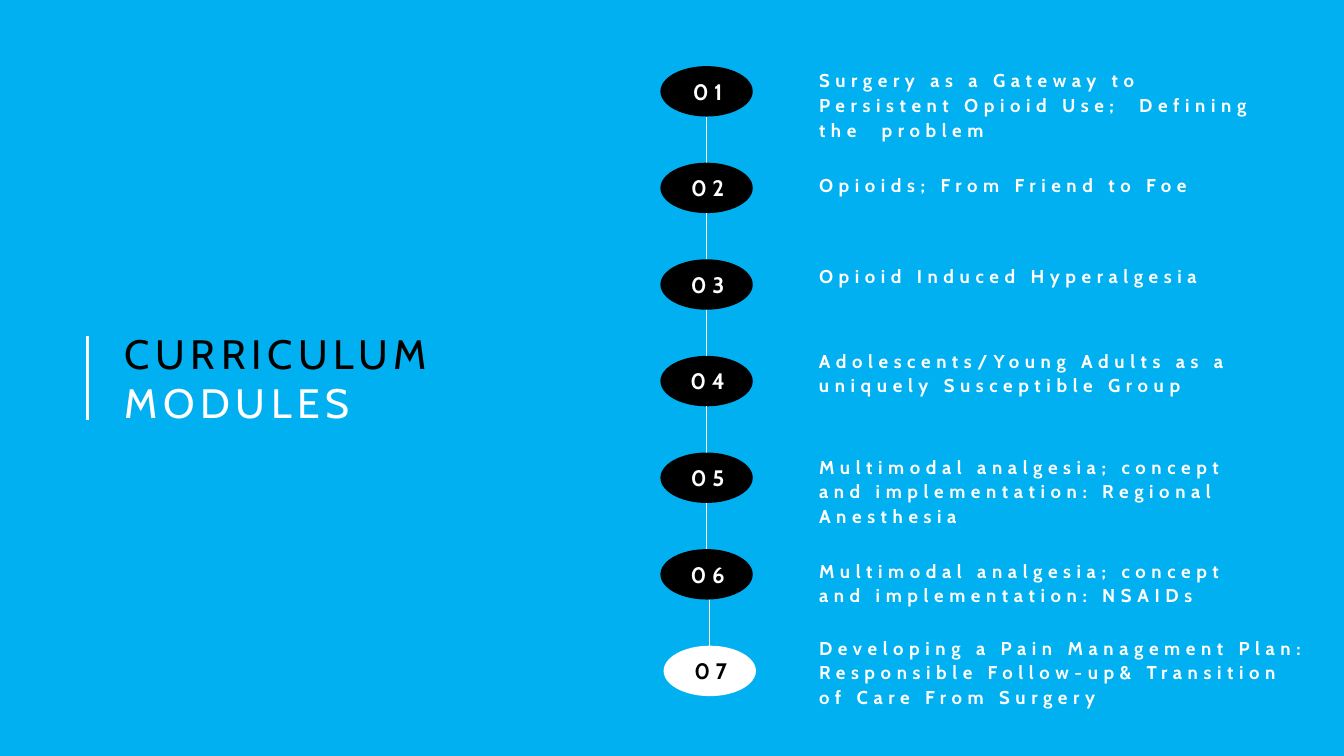
from dataclasses import dataclass

import lxml.etree
import pptx
import pptx.dml.color
import pptx.enum.shapes
import pptx.enum.text
import pptx.oxml.ns
import pptx.slide
import pptx.util

EMU = 9525  # one px, 96 to the inch
INK = {"sky": "00B0F0", "black": "000000", "white": "FFFFFF"}
FACE = "Cabin"
TRACK = 400  # letter spacing in hundredths of a point

TOP, STEP = 63, 92
OVAL_X, OVAL_W, OVAL_H = 629, 88, 48
TEXT_X = 780


@dataclass(frozen=True)
class Module:
    text: str
    top: int
    high: int
    wide: int = 417
    shift: int = 0
    fill: str = "black"
    ink: str = "white"


MODULES = [
    Module("Surgery as a Gateway to Persistent Opioid Use;  Defining the  problem", 64, 69),
    Module("Opioids; From Friend to Foe", 164, 22),
    Module("Opioid Induced Hyperalgesia", 250, 22),
    Module("Adolescents/Young Adults as a uniquely Susceptible Group", 331, 45, 441),
    Module("Multimodal analgesia; concept and implementation: Regional Anesthesia", 432, 93),
    Module("Multimodal analgesia; concept and implementation: NSAIDs", 531, 69),
    Module(
        "Developing a Pain Management Plan: Responsible Follow-up& Transition of Care From Surgery",
        604, 69, 465, shift=3, fill="white", ink="black",
    ),
]


def px(num: int) -> pptx.util.Emu:
    return pptx.util.Emu(num * EMU)


def tint(name: str) -> pptx.dml.color.RGBColor:
    return pptx.dml.color.RGBColor.from_string(INK[name])


def add_text(
    slide: pptx.slide.Slide, box: tuple[int, int, int, int],
    runs: list[tuple[str, str]], size: float, bold: bool = False,
    align: pptx.enum.text.PP_ALIGN = pptx.enum.text.PP_ALIGN.LEFT, lead: float = 1.0,
) -> None:
    """Add a box without margins; each run is its text and colour name."""
    frame = slide.shapes.add_textbox(*map(px, box)).text_frame
    frame.word_wrap = True
    frame.auto_size = pptx.enum.text.MSO_AUTO_SIZE.SHAPE_TO_FIT_TEXT
    frame.margin_left = frame.margin_right = 0
    frame.margin_top = frame.margin_bottom = 0
    para = frame.paragraphs[0]
    para.alignment = align
    para.line_spacing = lead
    font = para.font
    font.name, font.size, font.bold = FACE, pptx.util.Pt(size), bold
    font.color.rgb = tint(runs[0][1])
    props = para._p.pPr.find(pptx.oxml.ns.qn("a:defRPr"))
    props.set("spc", str(TRACK))
    for text, ink in runs:
        run = para.add_run()
        run.text = text
        if ink != runs[0][1]:
            run.font.color.rgb = tint(ink)


def add_line(slide: pptx.slide.Slide, x: int, top: int, end: int, width: float) -> None:
    """Add a white upright line."""
    line = slide.shapes.add_connector(
        pptx.enum.shapes.MSO_CONNECTOR.STRAIGHT, px(x), px(top), px(x), px(end)
    )
    line.line.color.rgb = tint("white")
    line.line.width = pptx.util.Pt(width)
    lxml.etree.SubElement(line._element.spPr, pptx.oxml.ns.qn("a:effectLst"))


def add_module(slide: pptx.slide.Slide, index: int, item: Module) -> None:
    """Add one numbered oval, the line down to it and its text."""
    left = OVAL_X + item.shift
    top = TOP + index * STEP
    if index:
        add_line(slide, left + OVAL_W // 2, top - STEP + OVAL_H, top, 1)
    oval = slide.shapes.add_shape(
        pptx.enum.shapes.MSO_SHAPE.OVAL, px(left), px(top), px(OVAL_W), px(OVAL_H)
    )
    oval.shadow.inherit = False
    oval.fill.solid()
    oval.fill.fore_color.rgb = tint(item.fill)
    oval.line.fill.background()
    add_text(
        slide, (left + 4, top + 11, 82, 26), [(f"{index + 1:02}", item.ink)],
        16, True, pptx.enum.text.PP_ALIGN.CENTER,
    )
    add_text(
        slide, (TEXT_X, item.top, item.wide, item.high), [(item.text, "white")],
        13.3, True, lead=1.1,
    )


def main() -> None:
    deck = pptx.Presentation()
    deck.slide_width, deck.slide_height = px(1280), px(720)
    slide = deck.slides.add_slide(deck.slide_layouts[6])
    back = slide.background.fill
    back.solid()
    back.fore_color.rgb = tint("sky")

    add_line(slide, 83, 320, 400, 2.25)
    add_text(
        slide, (119, 313, 507, 95),
        [("CURRICULUM ", "black"), ("MODULES", "white")], 29.3,
    )
    for index, item in enumerate(MODULES):
        add_module(slide, index, item)
    deck.save("out.pptx")


if __name__ == "__main__":
    main()
